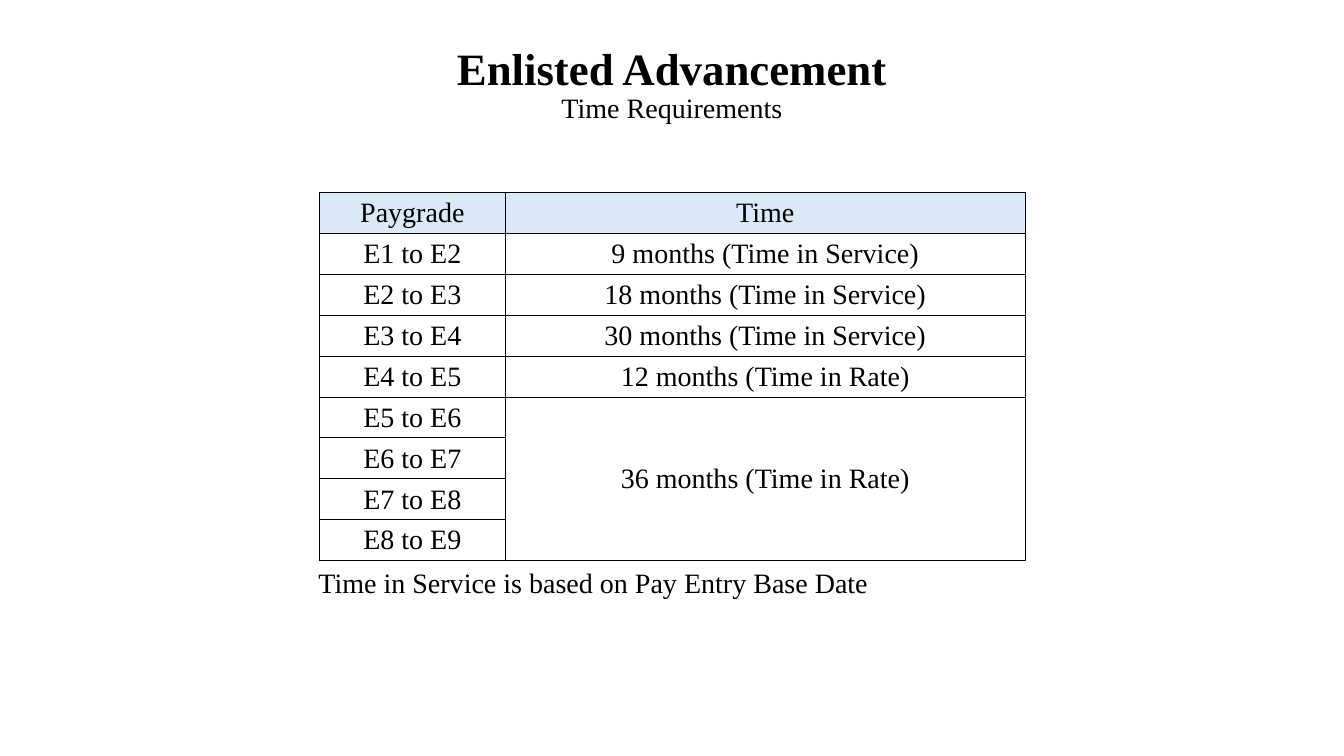
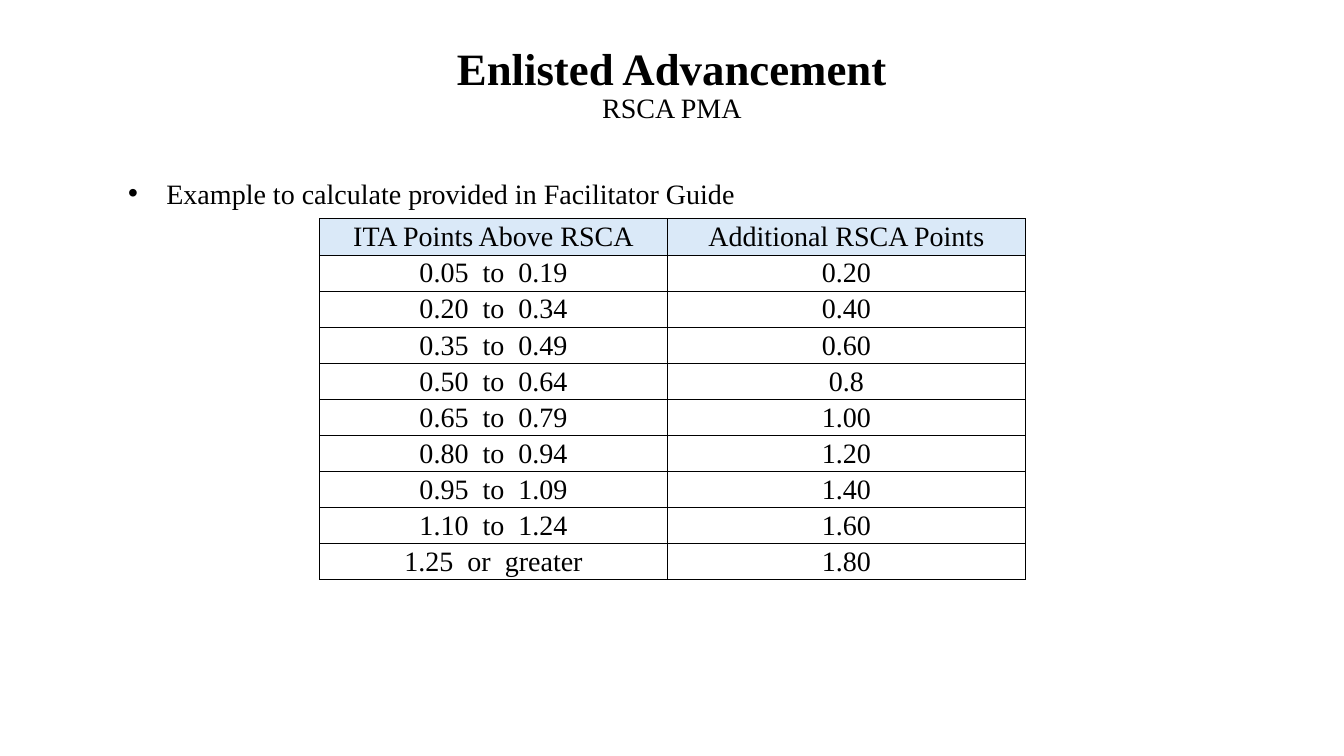
from lxml import etree
from pptx import Presentation
from pptx.dml.color import RGBColor
from pptx.enum.text import MSO_ANCHOR as Anchor, MSO_AUTO_SIZE as AutoSize, PP_ALIGN as Align
from pptx.oxml.ns import qn
from pptx.util import Inches, Pt

# Shared look
BLACK = RGBColor(0x00, 0x00, 0x00)
HEADER_BLUE = RGBColor(0xDA, 0xE9, 0xF8)
FONT = "Times New Roman"
TITLE_SIZE, TEXT_SIZE = 32, 20
TABLE_LEFT, TABLE_WIDTH = 3.17, 7
TITLE_AND_CONTENT, TITLE_ONLY = 1, 5

# Table contents, header first
TIME_ROWS = [
    ("Paygrade", "Time"),
    ("E1 to E2", "9 months (Time in Service)"),
    ("E2 to E3", "18 months (Time in Service)"),
    ("E3 to E4", "30 months (Time in Service)"),
    ("E4 to E5", "12 months (Time in Rate)"),
    ("E5 to E6", "36 months (Time in Rate)"),
    ("E6 to E7", ""),
    ("E7 to E8", ""),
    ("E8 to E9", ""),
]
POINTS_ROWS = [
    ("ITA Points Above RSCA", "Additional RSCA Points"),
    ("0.05  to  0.19", "0.20"),
    ("0.20  to  0.34", "0.40"),
    ("0.35  to  0.49", "0.60"),
    ("0.50  to  0.64", "0.8"),
    ("0.65  to  0.79", "1.00"),
    ("0.80  to  0.94", "1.20"),
    ("0.95  to  1.09", "1.40"),
    ("1.10  to  1.24", "1.60"),
    ("1.25  or  greater", "1.80"),
]


def place(shape, left, top, width, height):
    shape.left, shape.top = Inches(left), Inches(top)
    shape.width, shape.height = Inches(width), Inches(height)


def style_master(presentation):
    """Set the title's place and base size for every slide."""
    master = presentation.slide_master
    place(master.placeholders[0], 0, 0, 13.33, 1.7)
    title_style = next(master.element.iter(qn("p:titleStyle")))
    next(title_style.iter(qn("a:defRPr"))).set("sz", str(TITLE_SIZE * 100))


def add_run(paragraph, text, size=TEXT_SIZE, bold=False):
    run = paragraph.add_run()
    run.text = text
    run.font.name = FONT
    run.font.size = Pt(size)
    run.font.bold = bold
    run.font.color.rgb = BLACK


def add_slide(presentation, layout, subtitle):
    slide = presentation.slides.add_slide(presentation.slide_layouts[layout])
    paragraph = slide.shapes.title.text_frame.paragraphs[0]
    paragraph.alignment = Align.CENTER
    paragraph.line_spacing = 0.9
    add_run(paragraph, "Enlisted Advancement", TITLE_SIZE, bold=True)
    paragraph.add_line_break()
    add_run(paragraph, subtitle)
    return slide


def add_borders(cell):
    properties = cell._tc.get_or_add_tcPr()
    for side in ("a:lnL", "a:lnR", "a:lnT", "a:lnB"):
        line = etree.SubElement(properties, qn(side), w=str(Pt(0.5)))
        fill = etree.SubElement(line, qn("a:solidFill"))
        etree.SubElement(fill, qn("a:srgbClr"), val=str(BLACK))


def format_cell(cell, text, is_header):
    add_borders(cell)
    if is_header:
        cell.fill.solid()
        cell.fill.fore_color.rgb = HEADER_BLUE
    else:
        cell.fill.background()
    cell.margin_left = cell.margin_right = cell.margin_top = Inches(0.01)
    cell.margin_bottom = 0
    cell.vertical_anchor = Anchor.MIDDLE
    if text:
        paragraph = cell.text_frame.paragraphs[0]
        paragraph.alignment = Align.CENTER
        add_run(paragraph, text)


def add_grid(slide, rows, top, height, first_width):
    widths = (first_width, TABLE_WIDTH - first_width)
    table = slide.shapes.add_table(
        len(rows), len(widths), Inches(TABLE_LEFT), Inches(top),
        Inches(TABLE_WIDTH), Inches(height)).table
    for column, width in zip(table.columns, widths):
        column.width = Inches(width)
    for row_index, texts in enumerate(rows):
        table.rows[row_index].height = Inches(height / len(rows))
        for column_index, text in enumerate(texts):
            format_cell(table.cell(row_index, column_index), text, row_index == 0)
    return table


def add_note(slide, text):
    box = slide.shapes.add_textbox(Inches(3.06), Inches(5.56), Inches(10.27), Inches(0.43))
    box.text_frame.word_wrap = True
    add_run(box.text_frame.paragraphs[0], text)


def fill_bullet(body, text):
    place(body, 1.17, 1.7, 11, 0.44)
    body.text_frame.auto_size = AutoSize.NONE
    paragraph = body.text_frame.paragraphs[0]
    properties = paragraph._p.get_or_add_pPr()
    properties.set("marL", str(Inches(0.38)))
    properties.set("indent", str(-Inches(0.38)))
    etree.SubElement(properties, qn("a:buChar"), char="•")
    paragraph.space_before = Pt(0)
    add_run(paragraph, text)


def main():
    presentation = Presentation()
    presentation.slide_width = Inches(13.33)
    presentation.slide_height = Inches(7.5)
    style_master(presentation)

    # Time requirements
    slide = add_slide(presentation, TITLE_ONLY, "Time Requirements")
    table = add_grid(slide, TIME_ROWS, top=1.91, height=3.65, first_width=1.84)
    table.cell(5, 1).merge(table.cell(8, 1))
    add_note(slide, "Time in Service is based on Pay Entry Base Date")

    # Points by average
    slide = add_slide(presentation, TITLE_AND_CONTENT, "RSCA PMA")
    fill_bullet(slide.placeholders[1], "Example to calculate provided in Facilitator Guide")
    add_grid(slide, POINTS_ROWS, top=2.17, height=3.58, first_width=3.45)

    presentation.save("out.pptx")


if __name__ == "__main__":
    main()
